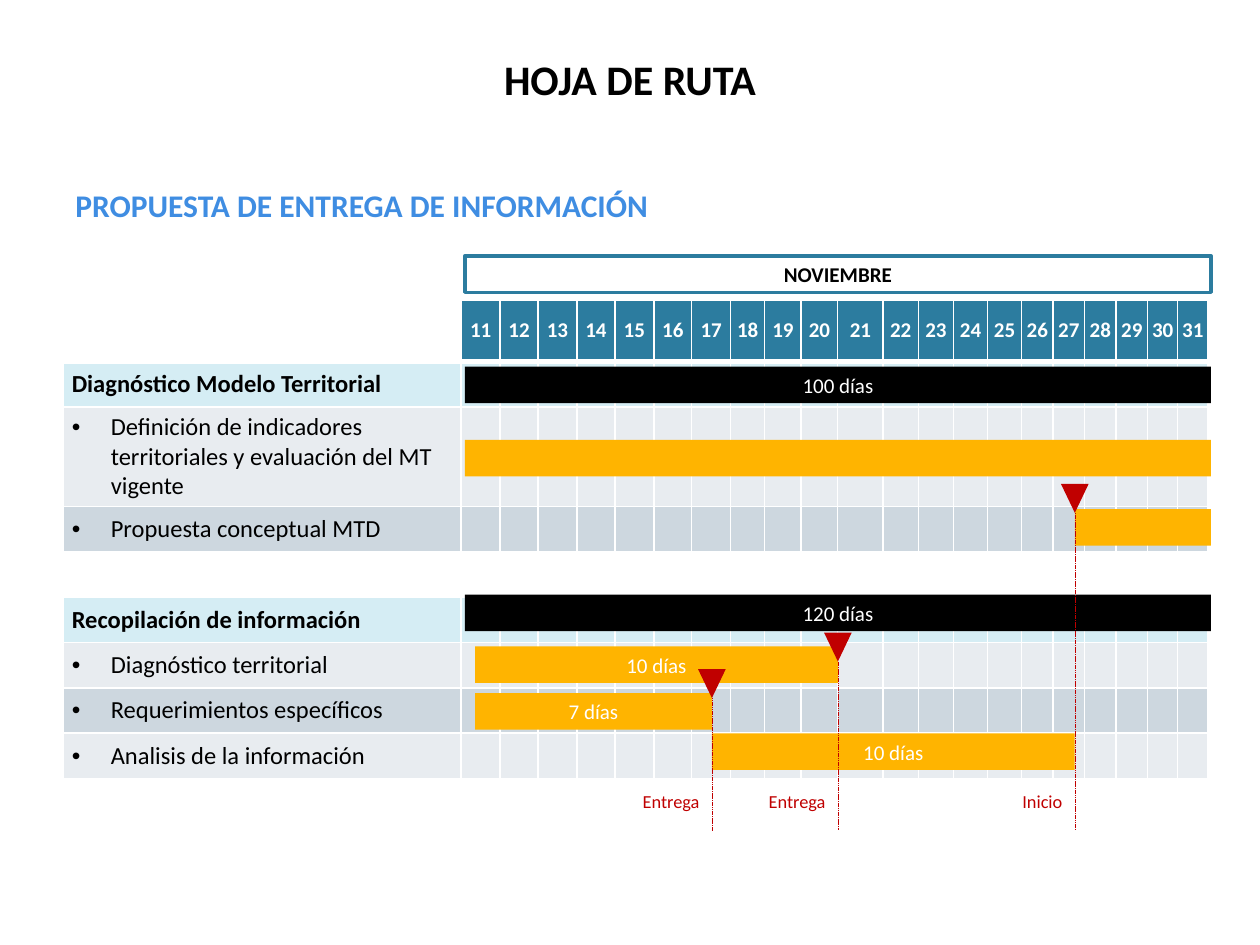
from lxml import etree
from pptx import Presentation
from pptx.dml.color import RGBColor
from pptx.enum.dml import MSO_LINE
from pptx.enum.shapes import MSO_CONNECTOR, MSO_SHAPE
from pptx.enum.text import MSO_ANCHOR, PP_ALIGN
from pptx.oxml.ns import qn
from pptx.util import Inches, Pt

COLORS = {
    "white": "FFFFFF", "black": "000000", "header": "2C7C9F", "heading": "3F8DE2",
    "group": "D5EDF4", "light": "E8ECF0", "dark": "CDD7DF",
    "task": "FFB400", "milestone": "C00000",
}
FONT = "Calibri"

# Calendar table
FIRST_DAY = 11
LABEL_WIDTH = 3.16
DAY_WIDTHS = [0.31, 0.3] * 3 + [0.31, 0.27, 0.29, 0.29, 0.36, 0.28, 0.28, 0.27, 0.27] \
    + [0.25] * 4 + [0.24] * 2
HEADER_HEIGHT, ROW_HEIGHT, TALL_HEIGHT = 0.49, 0.36, 0.79
ROWS = [  # label, fill
    ("Diagnóstico Modelo Territorial", "group"),
    ("Definición de indicadores territoriales y evaluación del MT vigente", "light"),
    ("Propuesta conceptual MTD", "dark"),
    ("", None),
    ("Recopilación de información", "group"),
    ("Diagnóstico territorial", "light"),
    ("Requerimientos específicos", "dark"),
    ("Analisis de la información", "light"),
]
TALL_ROW = 2

# Bars and milestones
START, TASK_START, END = 3.69, 3.77, 9.61
SPECIFIC, TERRITORIAL, CONCEPT = 5.65, 6.65, 8.53
BAR_HEIGHT = 0.29
BARS = [  # left, right, top, fill, text
    (START, END, 2.91, "black", "100 días"),
    (START, END, 3.49, "task", ""),
    (SPECIFIC, CONCEPT, 5.82, "task", "10 días"),
    (TASK_START, SPECIFIC, 5.5, "task", "7 días"),
    (TASK_START, TERRITORIAL, 5.13, "task", "10 días"),
    (START, END, 4.72, "black", "120 días"),
    (CONCEPT, END, 4.04, "task", ""),
]
MILESTONES = [  # x, top, label, label width
    (CONCEPT, 3.84, "Inicio", 0.52),
    (TERRITORIAL, 5.02, "Entrega", 0.67),
    (SPECIFIC, 5.31, "Entrega", 0.67),
]
MARKER_WIDTH, MARKER_HEIGHT = 0.22, 0.23
LINE_END, LABEL_TOP = 6.59, 6.22


def rgb(name):
    return RGBColor.from_string(COLORS[name])


def write_text(frame, text, size=12, color="black", bold=False,
               align=PP_ALIGN.LEFT, anchor=MSO_ANCHOR.TOP, wrap=True, bullet=False):
    frame.word_wrap = wrap
    frame.vertical_anchor = anchor
    paragraph = frame.paragraphs[0]
    paragraph.alignment = align
    if bullet:
        properties = paragraph._p.get_or_add_pPr()
        properties.set("marL", str(Inches(0.31)))
        properties.set("indent", str(Inches(-0.31)))
        etree.SubElement(properties, qn("a:buFont"), typeface="Arial")
        etree.SubElement(properties, qn("a:buChar"), char="•")
    run = paragraph.add_run()
    run.text = text
    run.font.name = FONT
    run.font.size = Pt(size)
    run.font.bold = bold
    run.font.color.rgb = rgb(color)


def add_text(slide, left, top, width, height, text, **style):
    box = slide.shapes.add_textbox(Inches(left), Inches(top), Inches(width), Inches(height))
    write_text(box.text_frame, text, **style)


def add_block(slide, left, top, width, height, fill, text="", outline=None,
              preset=MSO_SHAPE.RECTANGLE, **style):
    shape = slide.shapes.add_shape(preset, Inches(left), Inches(top),
                                   Inches(width), Inches(height))
    shape.shadow.inherit = False
    shape.fill.solid()
    shape.fill.fore_color.rgb = rgb(fill)
    if outline:
        shape.line.color.rgb = rgb(outline)
        shape.line.width = Pt(2)
    else:
        shape.line.fill.background()
    if text:
        write_text(shape.text_frame, text, align=PP_ALIGN.CENTER,
                   anchor=MSO_ANCHOR.MIDDLE, **style)
    return shape


def format_cell(cell, fill, bottom_width=1):
    properties = cell._tc.get_or_add_tcPr()
    for side in ("lnL", "lnR", "lnT", "lnB"):
        width = bottom_width if side == "lnB" else 1
        line = etree.SubElement(properties, qn(f"a:{side}"), w=str(Pt(width)))
        solid = etree.SubElement(line, qn("a:solidFill"))
        etree.SubElement(solid, qn("a:srgbClr"), val=COLORS["white"])
    if fill:
        cell.fill.solid()
        cell.fill.fore_color.rgb = rgb(fill)
    else:
        cell.fill.background()
    cell.margin_left = cell.margin_right = 0
    cell.margin_top = cell.margin_bottom = 0
    cell.vertical_anchor = MSO_ANCHOR.MIDDLE


def add_calendar(slide):
    widths = [LABEL_WIDTH] + DAY_WIDTHS
    heights = [HEADER_HEIGHT] + [ROW_HEIGHT] * len(ROWS)
    heights[TALL_ROW] = TALL_HEIGHT
    table = slide.shapes.add_table(len(heights), len(widths), Inches(0.5), Inches(2.38),
                                   Inches(sum(widths)), Inches(sum(heights))).table
    table.first_row = table.horz_banding = False
    for column, width in zip(table.columns, widths):
        column.width = Inches(width)
    for row, height in zip(table.rows, heights):
        row.height = Inches(height)

    # Day numbers
    for index in range(len(widths)):
        cell = table.cell(0, index)
        format_cell(cell, "header" if index else None, bottom_width=3)
        if index:
            write_text(cell.text_frame, str(FIRST_DAY + index - 1), color="white",
                       bold=True, align=PP_ALIGN.CENTER, anchor=MSO_ANCHOR.MIDDLE)

    # Tasks
    for row_index, (label, fill) in enumerate(ROWS, start=1):
        for index in range(len(widths)):
            format_cell(table.cell(row_index, index), fill)
        if label:
            cell = table.cell(row_index, 0)
            cell.margin_left = cell.margin_right = Inches(0.07)
            cell.margin_top = cell.margin_bottom = Inches(0.04)
            is_group = fill == "group"
            write_text(cell.text_frame, label, size=14, bold=is_group,
                       bullet=not is_group, anchor=MSO_ANCHOR.MIDDLE)


def add_milestone(slide, x, top, label, label_width):
    marker = add_block(slide, x - MARKER_WIDTH / 2, top, MARKER_WIDTH, MARKER_HEIGHT,
                       "milestone", preset=MSO_SHAPE.ISOSCELES_TRIANGLE)
    marker.rotation = 180
    line = slide.shapes.add_connector(MSO_CONNECTOR.STRAIGHT, Inches(x),
                                      Inches(top + MARKER_HEIGHT), Inches(x), Inches(LINE_END))
    line.line.color.rgb = rgb("milestone")
    line.line.width = Pt(0.25)
    line.line.dash_style = MSO_LINE.SQUARE_DOT
    etree.SubElement(line._element.spPr, qn("a:effectLst"))
    add_text(slide, x - label_width, LABEL_TOP, label_width, 0.28, label, size=10.5,
             color="milestone", align=PP_ALIGN.RIGHT, wrap=False)


def main():
    presentation = Presentation()
    presentation.slide_width = Inches(10)
    presentation.slide_height = Inches(7.5)
    slide = presentation.slides.add_slide(presentation.slide_layouts[6])

    add_calendar(slide)
    for left, right, top, fill, text in BARS:
        add_block(slide, left, top, right - left, BAR_HEIGHT, fill, text, color="white")
    for milestone in MILESTONES:
        add_milestone(slide, *milestone)

    # Headings
    add_text(slide, 0.5, 0, 9, 1.25, "HOJA DE RUTA", size=24, bold=True,
             align=PP_ALIGN.CENTER, anchor=MSO_ANCHOR.MIDDLE)
    add_text(slide, 0.5, 1.43, 9, 0.42, "PROPUESTA DE ENTREGA DE INFORMACIÓN",
             size=18, color="heading", bold=True)
    add_block(slide, START, 2.03, END - START, BAR_HEIGHT, "white", "NOVIEMBRE",
              outline="header", bold=True)

    presentation.save("out.pptx")


if __name__ == "__main__":
    main()
